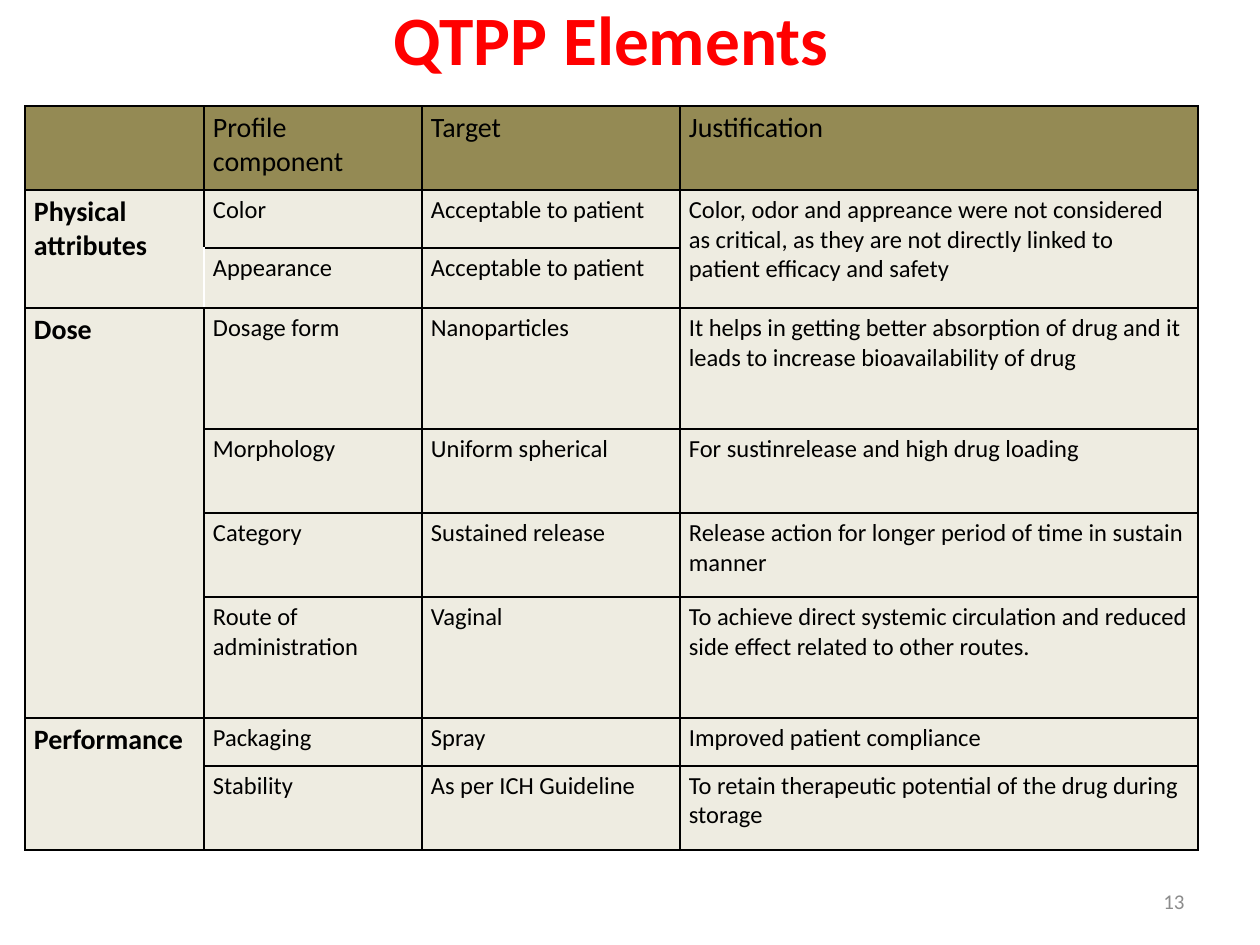
from lxml.etree import SubElement
from pptx import Presentation
from pptx.dml.color import RGBColor
from pptx.enum.text import MSO_ANCHOR as Anchor, MSO_AUTO_SIZE as AutoSize, PP_ALIGN as Align
from pptx.oxml.ns import qn
from pptx.util import Pt

PX = 914400 / 126
FONT = "Calibri"
BLACK, WHITE, RED, GREY = "000000", "FFFFFF", "FF0000", "8C8C8C"
OLIVE, CREAM = "948A54", "EEECE1"

TITLE = "QTPP Elements"
PAGE = "13"
HEADER = ("", "Profile component", "Target", "Justification")
GROUPS = [
    ("Physical attributes", [
        ("Color", "Acceptable to patient",
         "Color, odor and appreance were not considered as critical, "
         "as they are not directly linked to patient efficacy and safety"),
        ("Appearance", "Acceptable to patient", None),
    ]),
    ("Dose", [
        ("Dosage form", "Nanoparticles",
         "It helps in getting better absorption of drug and it leads to "
         "increase bioavailability of drug"),
        ("Morphology", "Uniform spherical", "For sustinrelease and high drug loading"),
        ("Category", "Sustained release",
         "Release action for longer period of time in sustain manner"),
        ("Route of administration", "Vaginal",
         "To achieve direct systemic circulation and reduced side effect "
         "related to other routes."),
    ]),
    ("Performance", [
        ("Packaging", "Spray", "Improved patient compliance"),
        ("Stability", "As per ICH Guideline",
         "To retain therapeutic potential of the drug during storage"),
    ]),
]
COLS = (179, 218, 258, 518)
ROWS = (84, 58, 60, 121, 84, 84, 121, 48, 84)


def px(*values):
    return [round(v * PX) for v in values]


def rgb(color):
    return RGBColor.from_string(color)


def write(tf, text, size, color, bold=False, align=Align.LEFT):
    tf.text = text
    p = tf.paragraphs[0]
    p.alignment = align
    for r in p.runs:
        r.font.name, r.font.size, r.font.bold = FONT, Pt(size), bold
        r.font.color.rgb = rgb(color)


def frame(sp):
    tf = sp.text_frame
    tf.word_wrap, tf.auto_size = True, AutoSize.NONE
    tf.vertical_anchor = Anchor.MIDDLE
    return tf


def set_borders(cell, colors):
    tcPr = cell._tc.get_or_add_tcPr()
    for side, color in zip("LRTB", colors):
        ln = SubElement(tcPr, qn(f"a:ln{side}"), w=str(Pt(1)))
        fill = SubElement(ln, qn("a:solidFill"))
        SubElement(fill, qn("a:srgbClr"), val=color)


prs = Presentation()
prs.slide_width, prs.slide_height = px(1260, 945)
s = prs.slides.add_slide(prs.slide_layouts[5])

title = s.shapes.title
title.left, title.top, title.width, title.height = px(76, 19, 1070, 37)
write(frame(title), TITLE, 39.6, RED, True, Align.CENTER)

rows = [HEADER]
merges = []
for name, items in GROUPS:
    first = len(rows)
    rows += [(name if i == 0 else None, *item) for i, item in enumerate(items)]
    merges.append((first, len(rows) - 1, 0))
merges.append((1, 2, 3))

table = s.shapes.add_table(len(rows), len(COLS), *px(25, 106, sum(COLS), sum(ROWS))).table
table.first_row = table.horz_banding = False
for col, width in zip(table.columns, COLS):
    col.width = px(width)[0]
for row, height in zip(table.rows, ROWS):
    row.height = px(height)[0]
for top, bottom, c in merges:
    table.cell(top, c).merge(table.cell(bottom, c))

white_sides = {(2, 0): "R", (2, 1): "L"}
for i, row in enumerate(rows):
    for j, text in enumerate(row):
        cell = table.cell(i, j)
        white = white_sides.get((i, j), "")
        set_borders(cell, [WHITE if side in white else BLACK for side in "LRTB"])
        cell.fill.solid()
        cell.fill.fore_color.rgb = rgb(CREAM if i else OLIVE)
        cell.margin_left, cell.margin_right, cell.margin_top, cell.margin_bottom = px(9, 9, 5, 5)
        if text:
            big = i == 0 or j == 0
            write(cell.text_frame, text, 16 if big else 14, BLACK, j == 0)

number = s.shapes.add_textbox(*px(903, 876, 294, 50))
write(frame(number), PAGE, 12, GREY, align=Align.RIGHT)

prs.save("out.pptx")
